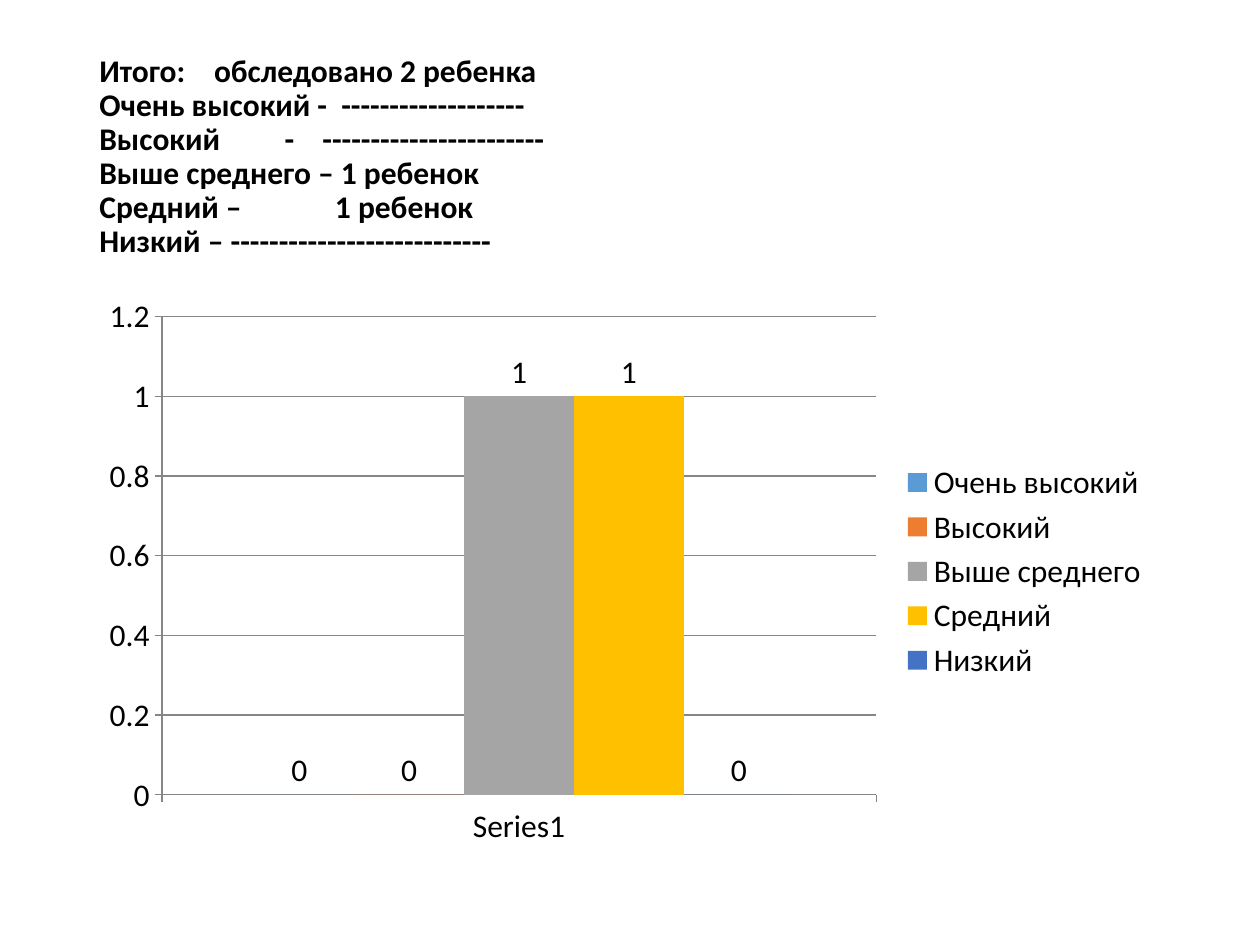
from pptx import Presentation
from pptx.chart.data import CategoryChartData
from pptx.dml.color import RGBColor
from pptx.enum.chart import (XL_CHART_TYPE, XL_LABEL_POSITION,
                             XL_LEGEND_POSITION, XL_TICK_MARK)
from pptx.enum.text import MSO_ANCHOR
from pptx.oxml.ns import qn
from pptx.util import Inches, Pt
from lxml.etree import SubElement

# Each line of the summary with its tab stops in inches
LINES = [
    ("Итого:\tобследовано 2 ребенка", [0.91]),
    ("Очень высокий -\t" + "-" * 19, [1.92]),
    ("Высокий\t-\t" + "-" * 23, [1.47, 1.77]),
    ("Выше среднего – 1 ребенок", []),
    ("Средний –\t1 ребенок", [1.87]),
    ("Низкий – " + "-" * 27, []),
]
LEVELS = [
    ("Очень высокий", 0, "5B9BD5"),
    ("Высокий", 0, "ED7D31"),
    ("Выше среднего", 1, "A5A5A5"),
    ("Средний", 1, "FFC000"),
    ("Низкий", 0, "4472C4"),
]


def color(code):
    return RGBColor.from_string(code)


def style(font, bold=False):
    font.name = "Calibri"
    font.size = Pt(18)
    font.bold = bold
    font.color.rgb = color("000000")


def add_tabs(para, stops):
    if stops:
        tabs = SubElement(para._p.get_or_add_pPr(), qn("a:tabLst"))
        for stop in stops:
            SubElement(tabs, qn("a:tab"), pos=str(Inches(stop)), algn="l")


def add_summary(slide):
    box = slide.shapes.add_textbox(Inches(0.69), Inches(0.4),
                                   Inches(8.62), Inches(1.45))
    frame = box.text_frame
    frame.word_wrap = True
    frame.vertical_anchor = MSO_ANCHOR.MIDDLE
    frame.margin_top = Inches(0.3)
    frame.text = "\n".join(text for text, _ in LINES)
    for para, (_, stops) in zip(frame.paragraphs, LINES):
        add_tabs(para, stops)
        para.line_spacing = 0.9
        for run in para.runs:
            style(run.font, bold=True)


def style_axis(axis):
    axis.major_tick_mark = XL_TICK_MARK.OUTSIDE
    axis.minor_tick_mark = XL_TICK_MARK.NONE
    axis.format.line.color.rgb = color("868686")
    axis.format.line.width = Pt(0.75)


def add_bars(slide):
    data = CategoryChartData()
    data.categories = ["Series1"]
    for name, value, _ in LEVELS:
        data.add_series(name, [value])
    chart = slide.shapes.add_chart(
        XL_CHART_TYPE.COLUMN_CLUSTERED, Inches(0.7), Inches(2.27),
        Inches(8.52), Inches(4.53), data).chart
    style(chart.font)
    chart.has_title = False
    chart.has_legend = True
    chart.legend.position = XL_LEGEND_POSITION.RIGHT
    chart.legend.include_in_layout = False

    style_axis(chart.category_axis)
    style_axis(chart.value_axis)
    chart.value_axis.has_major_gridlines = True
    grid = chart.value_axis.major_gridlines.format.line
    grid.color.rgb = color("868686")
    grid.width = Pt(0.75)

    plot = chart.plots[0]
    plot.gap_width = 150
    plot.overlap = 0
    plot.vary_by_categories = False
    for series, (_, _, fill) in zip(plot.series, LEVELS):
        series.format.fill.solid()
        series.format.fill.fore_color.rgb = color(fill)
        labels = series.data_labels
        labels.show_value = True
        labels.position = XL_LABEL_POSITION.OUTSIDE_END
        style(labels.font)


def main():
    deck = Presentation()
    deck.slide_width = Inches(10)
    deck.slide_height = Inches(7.5)
    slide = deck.slides.add_slide(deck.slide_layouts[6])
    add_summary(slide)
    add_bars(slide)
    deck.save("out.pptx")


if __name__ == "__main__":
    main()
